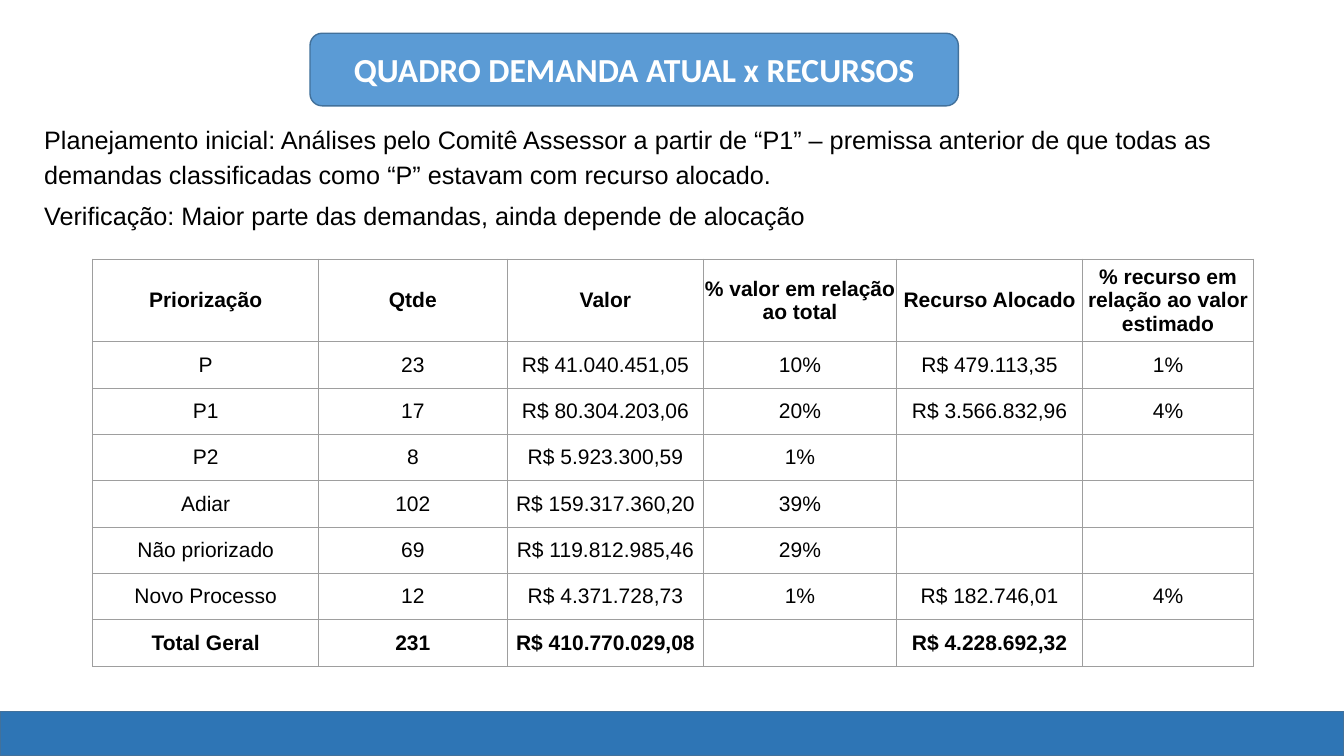
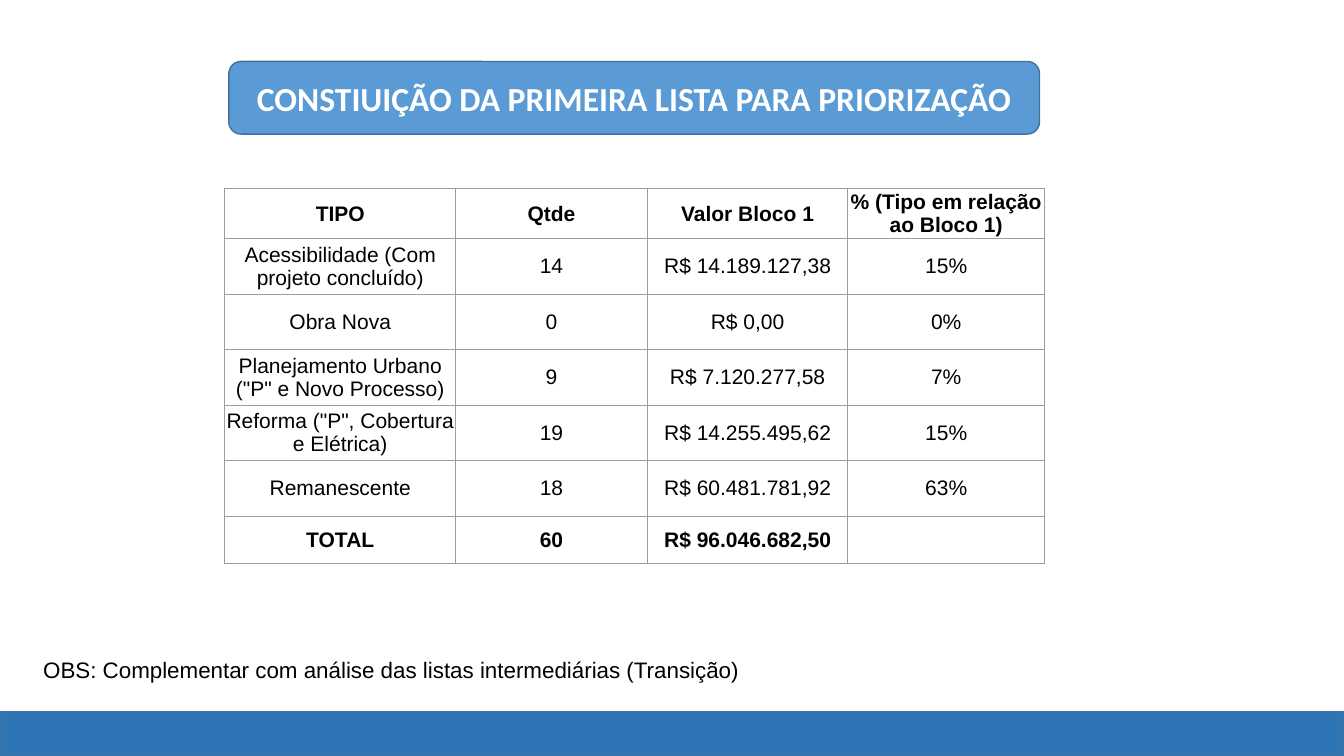
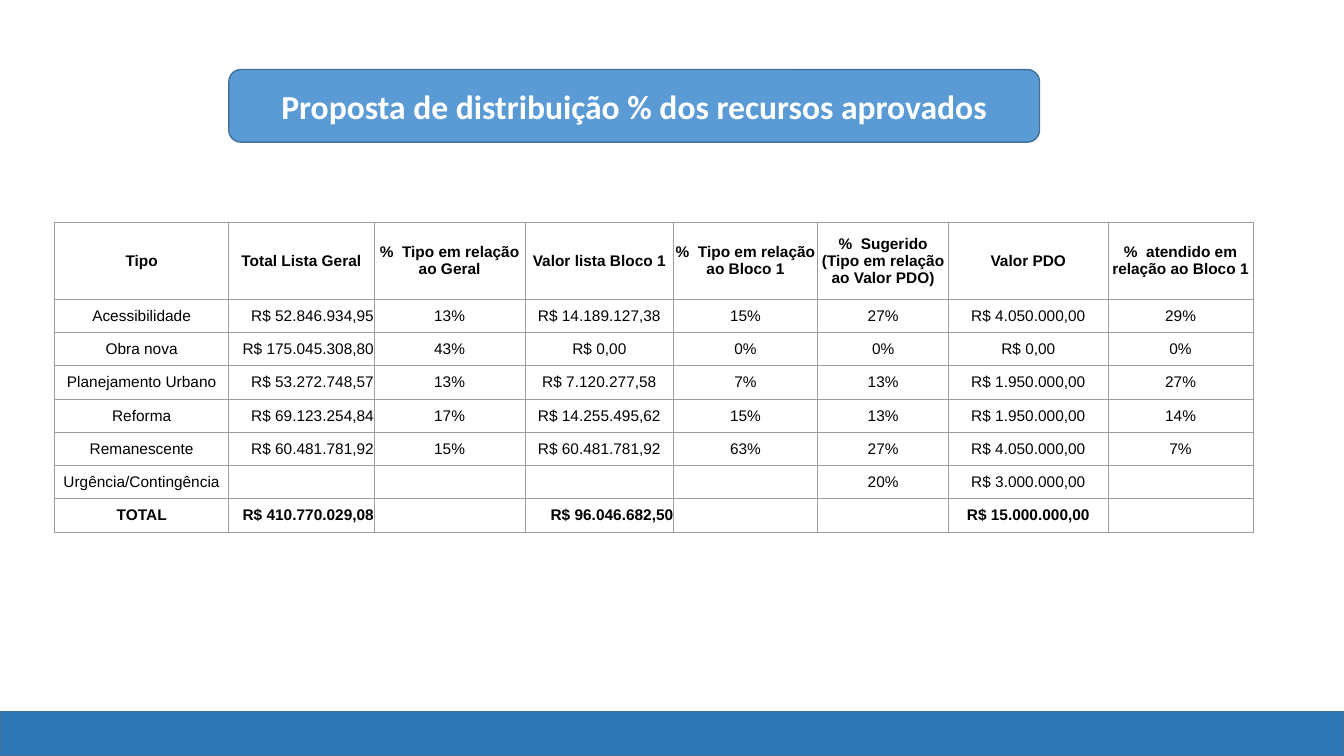
from lxml import etree
from pptx import Presentation
from pptx.dml.color import RGBColor
from pptx.enum.shapes import MSO_SHAPE as SHAPE
from pptx.enum.text import MSO_ANCHOR as ANCHOR, PP_ALIGN as ALIGN
from pptx.oxml.ns import qn
from pptx.util import Inches, Pt

BLACK = RGBColor(0x00, 0x00, 0x00)
WHITE = RGBColor(0xFF, 0xFF, 0xFF)
SKY = RGBColor(0x5B, 0x9B, 0xD5)
BLUE = RGBColor(0x2E, 0x75, 0xB5)
EDGE = RGBColor(0x42, 0x71, 0x9B)
GRID = RGBColor(0x9E, 0x9E, 0x9E)


def write(frame, *lines, size, font="Arial", color=BLACK, bold=False,
          align=ALIGN.LEFT, pitch=None, gap=0):
    """Put each line in its own paragraph; gap is the space between them."""
    for i, line in enumerate(lines):
        para = frame.add_paragraph() if i else frame.paragraphs[0]
        para.alignment = align
        if pitch:
            para.line_spacing = Pt(pitch)
        if i:
            para.space_before = Pt(gap)
        run = para.add_run()
        run.text = line
        run.font.name = font
        run.font.size = Pt(size)
        run.font.bold = bold
        run.font.color.rgb = color


def frame_cell(cell):
    """Draw a thin line on all four sides; borders must precede the fill."""
    props = cell._tc.get_or_add_tcPr()
    for i, side in enumerate(("lnL", "lnR", "lnT", "lnB")):
        line = etree.Element(qn(f"a:{side}"), w=str(Pt(0.75)))
        fill = etree.SubElement(line, qn("a:solidFill"))
        etree.SubElement(fill, qn("a:srgbClr"), val=str(GRID))
        props.insert(i, line)


class Deck:
    def __init__(self):
        self.prs = Presentation()
        self.prs.slide_width = Inches(13.33)
        self.prs.slide_height = Inches(7.5)
        self.slide = None

    def start(self, title, top, width):
        """Begin a slide with its footer band and title box."""
        self.slide = self.prs.slides.add_slide(self.prs.slide_layouts[6])
        self.box(SHAPE.RECTANGLE, 0, 7.06, 13.33, 0.44, BLUE)
        head = self.box(SHAPE.ROUNDED_RECTANGLE, 6.29 - width / 2, top,
                        width, 0.72, SKY)
        head.text_frame.vertical_anchor = ANCHOR.MIDDLE
        write(head.text_frame, title, size=24, font="Calibri", color=WHITE,
              bold=True, align=ALIGN.CENTER)

    def box(self, kind, left, top, width, height, fill):
        shape = self.slide.shapes.add_shape(
            kind, Inches(left), Inches(top), Inches(width), Inches(height))
        shape.shadow.inherit = False
        shape.fill.solid()
        shape.fill.fore_color.rgb = fill
        shape.line.color.rgb = EDGE
        shape.line.width = Pt(1)
        return shape

    def text(self, left, top, width, height, *lines, **style):
        area = self.slide.shapes.add_textbox(
            Inches(left), Inches(top), Inches(width), Inches(height))
        area.text_frame.word_wrap = True
        write(area.text_frame, *lines, **style)

    def table(self, left, top, cols, heights, rows, size, right=()):
        """Bold first and last rows; right lists right-aligned (row, col)."""
        table = self.slide.shapes.add_table(
            len(rows), len(cols), Inches(left), Inches(top),
            Inches(sum(cols)), Inches(sum(heights))).table
        table.first_row = table.horz_banding = False
        for col, width in zip(table.columns, cols):
            col.width = Inches(width)
        for r, (row, height) in enumerate(zip(rows, heights)):
            table.rows[r].height = Inches(height)
            for c, value in enumerate(row):
                cell = table.cell(r, c)
                cell.margin_left = cell.margin_right = 0
                cell.margin_top = cell.margin_bottom = 0
                cell.vertical_anchor = ANCHOR.MIDDLE
                cell.fill.background()
                frame_cell(cell)
                if value:
                    write(cell.text_frame, value, size=size,
                          bold=r in (0, len(rows) - 1),
                          align=ALIGN.RIGHT if (r, c) in right
                          else ALIGN.CENTER)


def demand(deck):
    deck.start("QUADRO DEMANDA ATUAL x RECURSOS", 0.33, 6.43)
    deck.text(
        0.34, 1.14, 12.4, 1.21,
        "Planejamento inicial: Análises pelo Comitê Assessor a partir de “P1” "
        "– premissa anterior de que todas as demandas classificadas como “P” "
        "estavam com recurso alocado.",
        "Verificação: Maior parte das demandas, ainda depende de alocação",
        size=18, pitch=25, gap=4)
    rows = [
        ("Priorização", "Qtde", "Valor", "% valor em relação ao total",
         "Recurso Alocado", "% recurso em relação ao valor estimado"),
        ("P", "23", "R$ 41.040.451,05", "10%", "R$ 479.113,35", "1%"),
        ("P1", "17", "R$ 80.304.203,06", "20%", "R$ 3.566.832,96", "4%"),
        ("P2", "8", "R$ 5.923.300,59", "1%", "", ""),
        ("Adiar", "102", "R$ 159.317.360,20", "39%", "", ""),
        ("Não priorizado", "69", "R$ 119.812.985,46", "29%", "", ""),
        ("Novo Processo", "12", "R$ 4.371.728,73", "1%", "R$ 182.746,01",
         "4%"),
        ("Total Geral", "231", "R$ 410.770.029,08", "", "R$ 4.228.692,32",
         ""),
    ]
    deck.table(0.92, 2.57, [2.24, 1.87, 1.95, 1.91, 1.85, 1.69],
               [0.82] + [0.46] * 7, rows, size=15)


def block(deck):
    deck.start("CONSTIUIÇÃO DA PRIMEIRA LISTA PARA PRIORIZAÇÃO", 0.61, 8.04)
    deck.text(
        0.33, 6.46, 7.88, 0.37,
        "OBS: Complementar com análise das listas intermediárias (Transição)",
        size=16)
    rows = [
        ("TIPO", "Qtde", "Valor Bloco 1", "% (Tipo em relação ao Bloco 1)"),
        ("Acessibilidade (Com projeto concluído)", "14", "R$ 14.189.127,38",
         "15%"),
        ("Obra Nova", "0", "R$ 0,00", "0%"),
        ('Planejamento Urbano ("P" e Novo Processo)', "9", "R$ 7.120.277,58",
         "7%"),
        ('Reforma ("P", Cobertura e Elétrica)', "19", "R$ 14.255.495,62",
         "15%"),
        ("Remanescente", "18", "R$ 60.481.781,92", "63%"),
        ("TOTAL", "60", "R$ 96.046.682,50", ""),
    ]
    deck.table(2.23, 1.87, [2.29, 1.9, 1.99, 1.95],
               [0.5] + [0.55] * 5 + [0.47], rows, size=15)


def share(deck):
    deck.start("Proposta de distribuição % dos recursos aprovados", 0.69, 8.04)
    rows = [
        ("Tipo", "Total Lista Geral", "%  Tipo em relação ao Geral",
         "Valor lista Bloco 1", "%  Tipo em relação ao Bloco 1",
         "%  Sugerido (Tipo em relação ao Valor PDO)", "Valor PDO",
         "%  atendido em relação ao Bloco 1"),
        ("Acessibilidade", "R$ 52.846.934,95", "13%", "R$ 14.189.127,38",
         "15%", "27%", "R$ 4.050.000,00", "29%"),
        ("Obra nova", "R$ 175.045.308,80", "43%", "R$ 0,00", "0%", "0%",
         "R$ 0,00", "0%"),
        ("Planejamento Urbano", "R$ 53.272.748,57", "13%", "R$ 7.120.277,58",
         "7%", "13%", "R$ 1.950.000,00", "27%"),
        ("Reforma", "R$ 69.123.254,84", "17%", "R$ 14.255.495,62", "15%",
         "13%", "R$ 1.950.000,00", "14%"),
        ("Remanescente", "R$ 60.481.781,92", "15%", "R$ 60.481.781,92", "63%",
         "27%", "R$ 4.050.000,00", "7%"),
        ("Urgência/Contingência", "", "", "", "", "20%", "R$ 3.000.000,00",
         ""),
        ("TOTAL", "R$ 410.770.029,08", "", "R$ 96.046.682,50", "", "",
         "R$ 15.000.000,00", ""),
    ]
    right = {(r, 1) for r in range(1, 8)} | {(7, 3)}
    deck.table(0.54, 2.21, [1.73, 1.44, 1.5, 1.47, 1.43, 1.3, 1.58, 1.44],
               [0.76] + [0.33] * 7, rows, size=11, right=right)


def main():
    deck = Deck()
    for build in (demand, block, share):
        build(deck)
    deck.prs.save("out.pptx")


if __name__ == "__main__":
    main()
